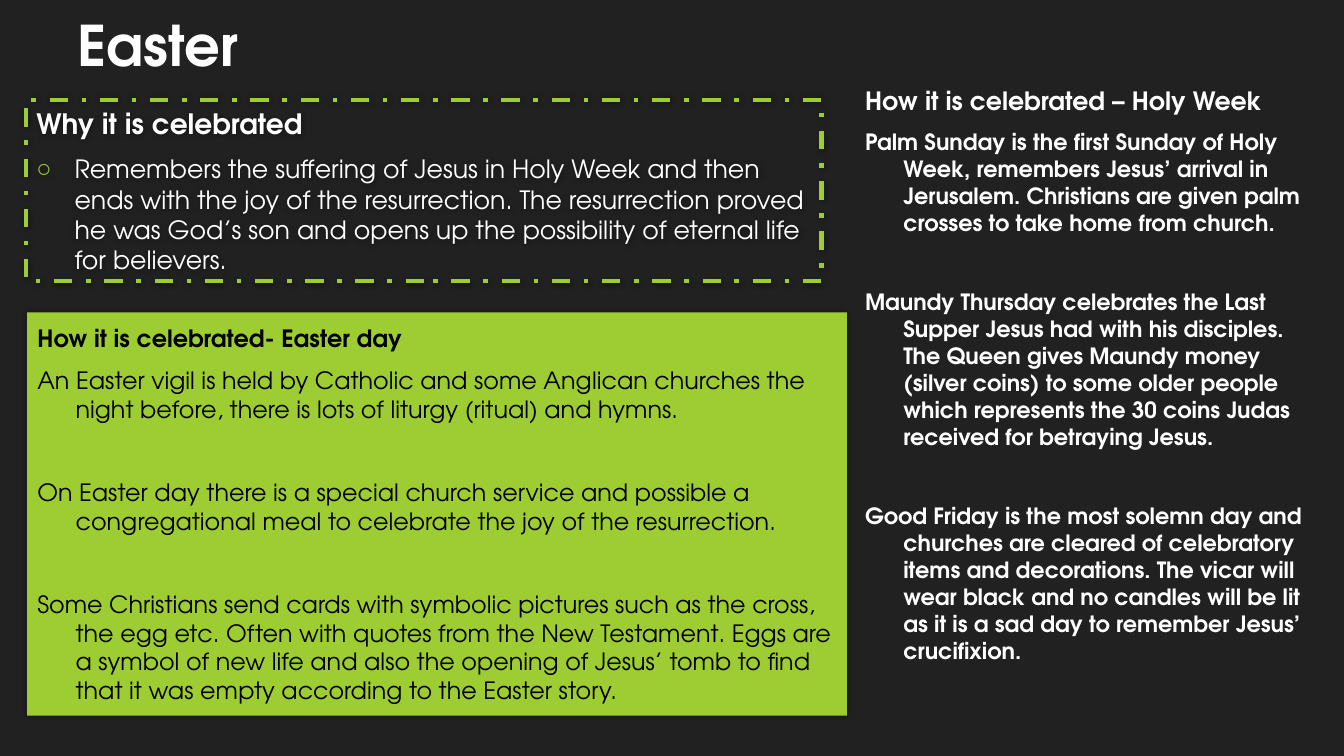
import lxml.etree
import pptx
import pptx.dml.color
import pptx.enum.dml
import pptx.enum.text
import pptx.oxml.ns
import pptx.util

Inches, Pt = pptx.util.Inches, pptx.util.Pt
FONT = "TeX Gyre Adventor"
DARK, LIME, WHITE, BLACK = "212121", "9ECD33", "FFFFFF", "000000"

WHY = (
    "Remembers the suffering of Jesus in Holy Week and then ends with the joy of the "
    "resurrection. The resurrection proved he was God’s son and opens up the possibility "
    "of eternal life for believers."
)
WEEK = [
    "Palm Sunday is the first Sunday of Holy Week, remembers Jesus’ arrival in Jerusalem. "
    "Christians are given palm crosses to take home from church.",
    "Maundy Thursday celebrates the Last Supper Jesus had with his disciples. The Queen "
    "gives Maundy money (silver coins) to some older people which represents the 30 coins "
    "Judas received for betraying Jesus.",
    "Good Friday is the most solemn day and churches are cleared of celebratory items and "
    "decorations. The vicar will wear black and no candles will be lit as it is a sad day "
    "to remember Jesus’ crucifixion.",
]
DAY = [
    "An Easter vigil is held by Catholic and some Anglican churches the night before, "
    "there is lots of liturgy (ritual) and hymns.",
    "On Easter day there is a special church service and possible a congregational meal "
    "to celebrate the joy of the resurrection.",
    "Some Christians send cards with symbolic pictures such as the cross, the egg etc. "
    "Often with quotes from the New Testament. Eggs are a symbol of new life and also the "
    "opening of Jesus’ tomb to find that it was empty according to the Easter story.",
]


def color(code):
    """Turn a hex string into a colour."""
    return pptx.dml.color.RGBColor.from_string(code)


def node(parent, tag, **attrs):
    """Append a DrawingML element and return it."""
    name = pptx.oxml.ns.qn("a:" + tag)
    return lxml.etree.SubElement(parent, name, {k: str(v) for k, v in attrs.items()})


def place(shape, box, anchor):
    """Move a placeholder to its box and return its text frame."""
    shape.left, shape.top, shape.width, shape.height = [Inches(v) for v in box]
    frame = shape.text_frame
    frame.word_wrap = True
    frame.auto_size = pptx.enum.text.MSO_AUTO_SIZE.NONE
    frame.vertical_anchor = anchor
    return frame


def write(para, text, size, code, bold):
    """Add one run to a left-aligned paragraph."""
    para.alignment = pptx.enum.text.PP_ALIGN.LEFT
    run = para.add_run()
    run.text = text
    run.font.name, run.font.size, run.font.bold = FONT, Pt(size), bold
    run.font.color.rgb = color(code)


def item(para, text, size, code, bold, gap=0, mark=None):
    """Format a hanging paragraph, with an optional bullet."""
    para.space_before = Pt(0.2 * size + gap)
    para.space_after = Pt(6)
    props = para._p.get_or_add_pPr()
    props.set("marL", str(Inches(0.38)))
    props.set("indent", str(Inches(-0.38)))
    if mark:
        node(node(props, "buClr"), "srgbClr", val=LIME)
        node(props, "buChar", char=mark)
    else:
        node(props, "buNone")
    write(para, text, size, code, bold)


def shade(shape):
    """Give a shape a soft dark shadow."""
    effect = node(shape._element.spPr, "effectLst")
    outer = node(effect, "outerShdw", blurRad=Pt(4), dist=0, dir=240 * 60000, rotWithShape=0)
    node(node(outer, "srgbClr", val=BLACK), "alpha", val=40000)


def title(shape, box):
    """Write the slide title."""
    frame = place(shape, box, pptx.enum.text.MSO_ANCHOR.BOTTOM)
    write(frame.paragraphs[0], "Easter", 40, "FEFEFE", True)


def reason(shape, box):
    """Draw the dashed panel that tells why."""
    frame = place(shape, box, pptx.enum.text.MSO_ANCHOR.MIDDLE)
    shape.fill.background()
    shape.line.color.rgb = color(LIME)
    shape.line.width = Pt(3.25)
    shape.line.dash_style = pptx.enum.dml.MSO_LINE.DASH_DOT
    shade(shape)
    item(frame.paragraphs[0], "Why it is celebrated", 20, WHITE, True)
    item(frame.add_paragraph(), WHY, 18, WHITE, False, mark="○")


def story(shape, box, head, large, texts, size, code, bold, fill=None):
    """Draw a heading over spaced paragraphs, on an optional fill."""
    frame = place(shape, box, pptx.enum.text.MSO_ANCHOR.MIDDLE)
    if fill:
        shape.fill.solid()
        shape.fill.fore_color.rgb = color(fill)
        shade(shape)
    item(frame.paragraphs[0], head, large, code, True)
    for count, text in enumerate(texts):
        gap = 1.4 * size + 6 if count else 0
        item(frame.add_paragraph(), text, size, code, bold, gap)


def main():
    """Build and save the slide."""
    deck = pptx.Presentation()
    deck.slide_width, deck.slide_height = Inches(13.33), Inches(7.5)
    slide = deck.slides.add_slide(deck.slide_layouts.get_by_name("Comparison"))
    slide.background.fill.solid()
    slide.background.fill.fore_color.rgb = color(DARK)
    head, why, week, day, *spare = [s for s in slide.placeholders]
    for shape in spare:
        shape._element.getparent().remove(shape._element)
    title(head, (0.67, -0.03, 12, 0.85))
    reason(why, (0.26, 0.99, 7.89, 1.8))
    story(week, (8.48, 0.31, 4.71, 6.81), "How it is celebrated – Holy Week", 18,
          WEEK, 16, WHITE, True)
    story(day, (0.27, 3.1, 8.13, 4), "How it is celebrated- Easter day", 17,
          DAY, 17, BLACK, False, LIME)
    deck.save("out.pptx")


if __name__ == "__main__":
    main()
